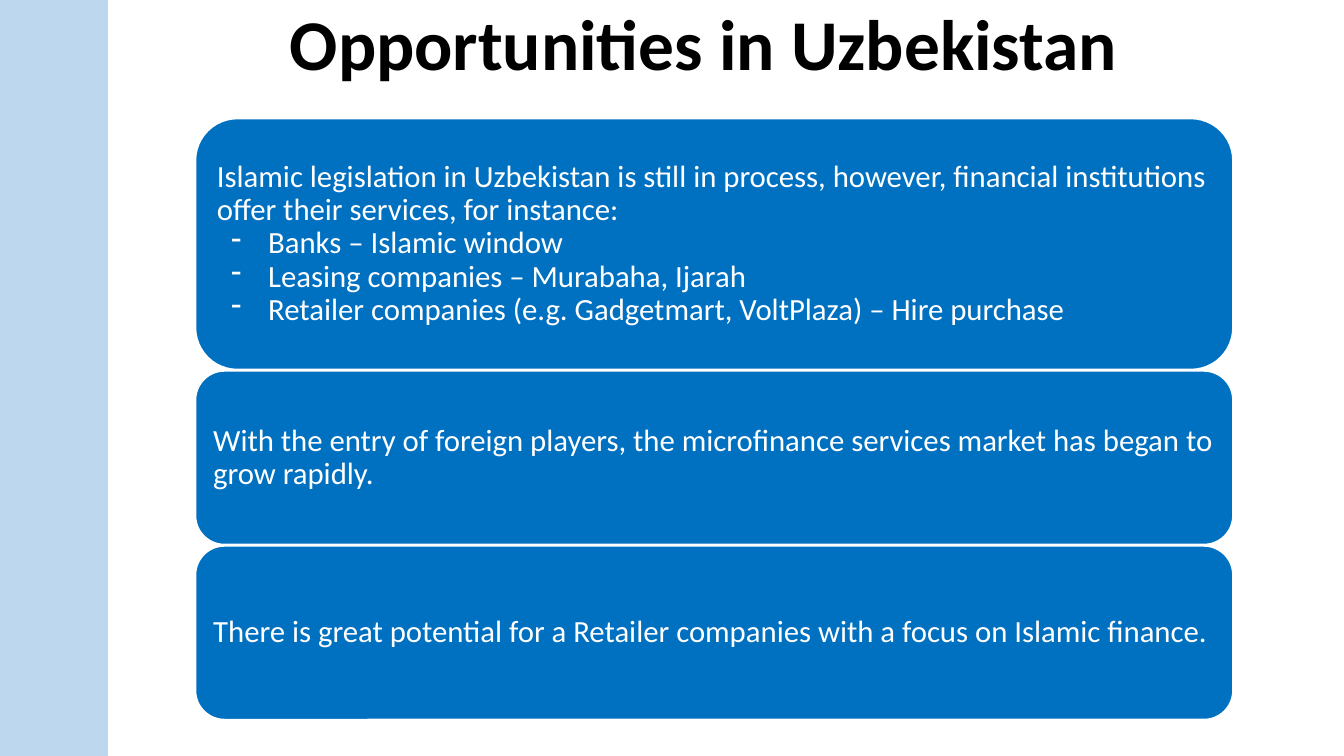
from lxml import etree
from pptx import Presentation
from pptx.dml.color import RGBColor
from pptx.enum.shapes import MSO_SHAPE
from pptx.enum.text import MSO_ANCHOR, PP_ALIGN
from pptx.oxml.ns import qn
from pptx.util import Cm, Pt

RECTANGLE = MSO_SHAPE.RECTANGLE
ROUNDED = MSO_SHAPE.ROUNDED_RECTANGLE
MIDDLE = MSO_ANCHOR.MIDDLE
LEFT, CENTER = PP_ALIGN.LEFT, PP_ALIGN.CENTER

COLORS = {"band": "BDD7EE", "card": "0070C0", "white": "FFFFFF", "black": "000000"}
PAGE_WIDTH, PAGE_HEIGHT = 33.87, 19.05
CARD_LEFT, CARD_TOP, CARD_WIDTH, CARD_GAP = 4.93, 2.99, 26.14, 0.04

CARDS = [
    (6.32, [
        ("Islamic legislation in Uzbekistan is still in process, however, "
         "financial institutions offer their services, for instance:", False),
        ("Banks – Islamic window", True),
        ("Leasing companies – Murabaha, Ijarah", True),
        ("Retailer companies (e.g. Gadgetmart, VoltPlaza) – Hire purchase", True),
    ]),
    (4.37, [
        ("With the entry of foreign players, the microfinance services market "
         "has began to grow rapidly.", False),
    ]),
    (4.37, [
        ("There is great potential for a Retailer companies with a focus on "
         "Islamic finance.", False),
    ]),
]


class SlideBuilder:
    """Draws the elements of one slide in a shared style."""

    def __init__(self, page, font="Calibri"):
        self.page = page
        self.font = font

    def color(self, name):
        return RGBColor.from_string(COLORS[name])

    def paragraph(self, para, text, size, color, align=LEFT, bold=False):
        para.alignment = align
        para.line_spacing = 0.9
        span = para.add_run()
        span.text = text
        span.font.name = self.font
        span.font.size = Pt(size)
        span.font.bold = bold
        span.font.color.rgb = self.color(color)

    def dash(self, para):
        properties = para._p.get_or_add_pPr()
        properties.set("marL", str(Cm(1.29)))
        properties.set("indent", str(Cm(-0.93)))
        etree.SubElement(properties, qn("a:buChar")).set("char", "-")

    def title(self, text, left, top, width, height):
        box = self.page.shapes.add_textbox(Cm(left), Cm(top), Cm(width), Cm(height))
        frame = box.text_frame
        frame.word_wrap = True
        frame.vertical_anchor = MIDDLE
        self.paragraph(frame.paragraphs[0], text, 51, "black", CENTER, True)

    def panel(self, kind, fill, left, top, width, height):
        shape = self.page.shapes.add_shape(kind, Cm(left), Cm(top), Cm(width), Cm(height))
        shape.shadow.inherit = False
        shape.fill.solid()
        shape.fill.fore_color.rgb = self.color(fill)
        shape.line.fill.background()
        return shape

    def card(self, lines, left, top, width, height):
        shape = self.panel(ROUNDED, "card", left, top, width, height)
        shape.line.color.rgb = self.color("white")
        shape.line.width = Pt(1)
        frame = shape.text_frame
        frame.word_wrap = True
        frame.vertical_anchor = MIDDLE
        frame.margin_left = frame.margin_right = Cm(0.23)
        frame.margin_top = frame.margin_bottom = Cm(0.23)
        for index, (text, dashed) in enumerate(lines):
            para = frame.add_paragraph() if index else frame.paragraphs[0]
            self.paragraph(para, text, 22, "white")
            if dashed:
                self.dash(para)


def main():
    deck = Presentation()
    deck.slide_width, deck.slide_height = Cm(PAGE_WIDTH), Cm(PAGE_HEIGHT)
    builder = SlideBuilder(deck.slides.add_slide(deck.slide_layouts[6]))
    builder.title("Opportunities in Uzbekistan", 3.45, 0, 28.58, 2.39)
    builder.panel(RECTANGLE, "band", 0, 0, 2.72, PAGE_HEIGHT)
    top = CARD_TOP
    for height, lines in CARDS:
        builder.card(lines, CARD_LEFT, top, CARD_WIDTH, height)
        top += height + CARD_GAP
    deck.save("out.pptx")


if __name__ == "__main__":
    main()
